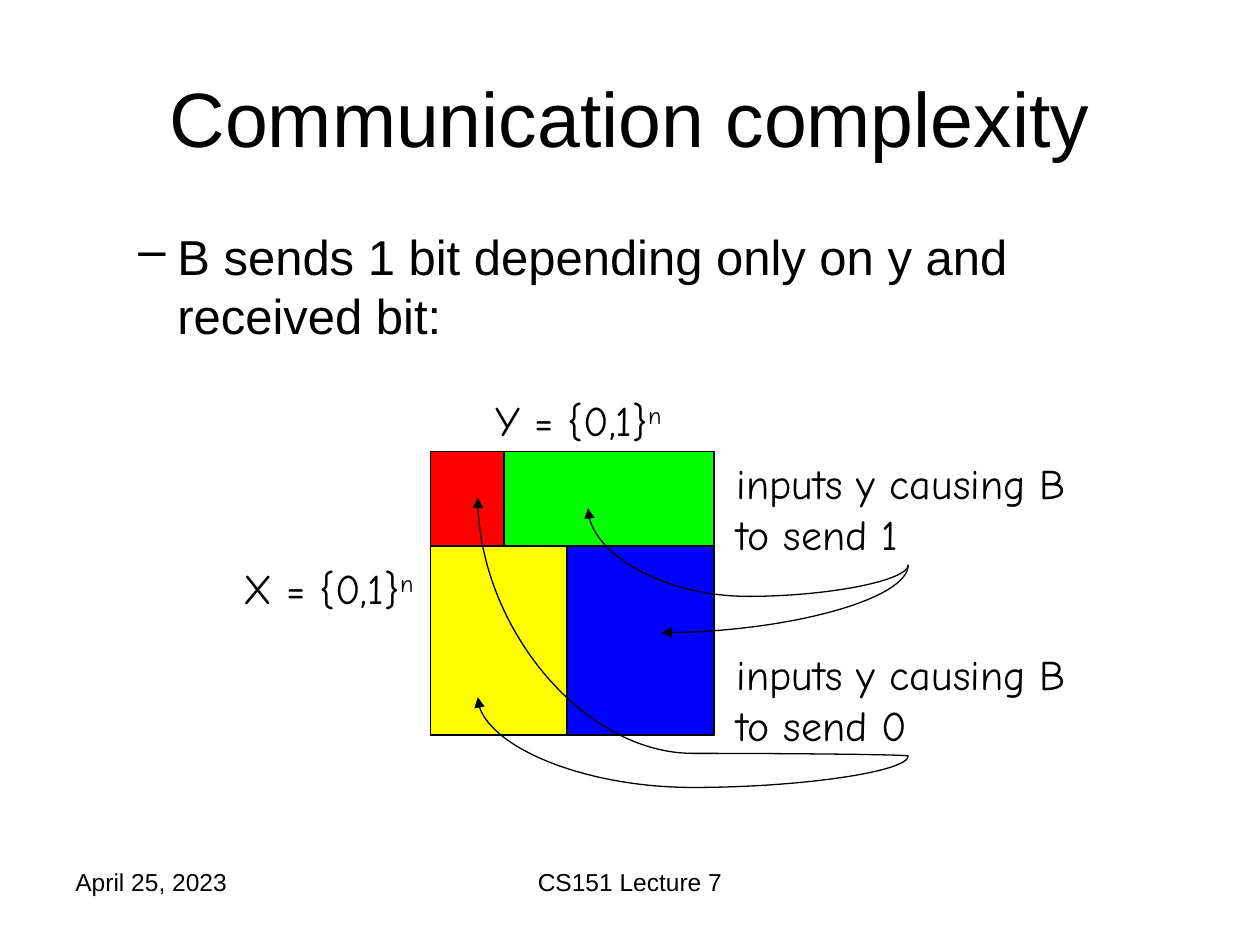
from dataclasses import dataclass

from lxml import etree
from pptx import Presentation
from pptx.dml.color import RGBColor
from pptx.enum.shapes import MSO_CONNECTOR, MSO_SHAPE
from pptx.enum.text import MSO_ANCHOR, MSO_AUTO_SIZE, PP_ALIGN
from pptx.oxml.ns import qn
from pptx.util import Inches, Pt

CURVE, RECTANGLE = MSO_CONNECTOR.CURVE, MSO_SHAPE.RECTANGLE
MIDDLE, GROW = MSO_ANCHOR.MIDDLE, MSO_AUTO_SIZE.SHAPE_TO_FIT_TEXT
LEFT, CENTER = PP_ALIGN.LEFT, PP_ALIGN.CENTER
CELL = Inches(1) / 12  # the slide is a grid of 120 columns by 90 rows


@dataclass(frozen=True)
class Theme:
    ink: str = "000000"
    red: str = "FF0000"
    green: str = "00FF00"
    yellow: str = "FFFF00"
    blue: str = "0000FF"
    font: str = "Arial"
    label_font: str = "Comic Neue"
    title: int = 44
    body: int = 28
    label: int = 24
    footer: int = 14
    line: float = 0.75


THEME = Theme()


def cells(*counts):
    return [round(count * CELL) for count in counts]


def shifted(origin, box):
    return (origin[0] + box[0], origin[1] + box[1], *box[2:])


def style_line(line):
    line.color.rgb = RGBColor.from_string(THEME.ink)
    line.width = Pt(THEME.line)


def add_text(slide, box, runs, size, font=THEME.font, align=LEFT, before=0, wrap=True):
    """Place one paragraph; runs are (text, is superscript) pairs."""
    frame = slide.shapes.add_textbox(*cells(*box)).text_frame
    frame.word_wrap = wrap
    paragraph = frame.paragraphs[0]
    paragraph.alignment = align
    if before:
        spacing = etree.SubElement(paragraph._p.get_or_add_pPr(), qn("a:spcBef"))
        etree.SubElement(spacing, qn("a:spcPct"), val=str(before * 1000))
    for text, superscript in runs:
        run = paragraph.add_run()
        run.text = text
        run.font.size = Pt(size)
        run.font.name = font
        run.font.color.rgb = RGBColor.from_string(THEME.ink)
        if superscript:
            run.font._element.set("baseline", "30000")
    return frame


def add_title(slide, box):
    frame = add_text(slide, box, [("Communication complexity", False)],
                     THEME.title, align=CENTER)
    frame.vertical_anchor = MIDDLE


def add_body(slide, box):
    frame = add_text(slide, box,
                     [("B sends 1 bit depending only on y and received bit:", False)],
                     THEME.body, before=20)
    # Dash bullet with a hanging indent
    properties = frame.paragraphs[0]._p.get_or_add_pPr()
    properties.set("marL", str(Inches(0.81)))
    properties.set("indent", str(Inches(-0.31)))
    etree.SubElement(properties, qn("a:buChar"), char="–")


def add_region(slide, box, color=None):
    region = slide.shapes.add_shape(RECTANGLE, *cells(*box))
    region.shadow.inherit = False
    if color:
        region.fill.solid()
        region.fill.fore_color.rgb = RGBColor.from_string(color)
    else:
        region.fill.background()
    style_line(region.line)


def add_curved_arrow(slide, start, end, bend=None):
    """Leave start vertically; bend is the row of the turn, None for a quarter turn."""
    (x1, y1), (x2, y2) = start, end
    run, rise = abs(x2 - x1), abs(y2 - y1)
    arrow = slide.shapes.add_connector(CURVE, 0, 0, 0, 0)
    # The unrotated frame has its sides swapped around the same centre
    arrow.left, arrow.top, arrow.width, arrow.height = cells(
        (x1 + x2 - rise) / 2, (y1 + y2 - run) / 2, rise, run)
    properties = arrow._element.spPr
    transform = properties.find(qn("a:xfrm"))
    upward = y2 < y1
    transform.set("rot", str((270 if upward else 90) * 60000))
    if upward:
        transform.set("flipV", "1")
    geometry = properties.find(qn("a:prstGeom"))
    if bend is None:
        geometry.set("prst", "curvedConnector2")
    else:
        share = round((bend - y1) / (y2 - y1) * 100000)
        etree.SubElement(geometry.find(qn("a:avLst")), qn("a:gd"),
                         name="adj1", fmla=f"val {share}")
    style_line(arrow.line)
    etree.SubElement(arrow.line._get_or_add_ln(), qn("a:tailEnd"), type="triangle")
    etree.SubElement(properties, qn("a:effectLst"))


def add_matrix(slide, box):
    left, top, width, height = box
    split_row = height / 3
    # Each band of rows: top, height, column split, left colour, right colour
    bands = [
        (0, split_row, 7, THEME.red, THEME.green),
        (split_row, height - split_row, 13, THEME.yellow, THEME.blue),
    ]
    for row, rows, split, left_color, right_color in bands:
        add_region(slide, (left, top + row, split, rows), left_color)
        add_region(slide, (left + split, top + row, width - split, rows), right_color)

    # Labels, relative to the matrix corner
    power = ("n", True)
    labels = [
        ((-19, 10, 25, 6), [("X = {0,1}", False), power], True),
        ((5, -6, 19, 6), [("Y = {0,1}", False), power], False),
        ((28, 0, 35, 10.8), [("inputs y causing B to send 1", False)], True),
        ((28, 18.2, 35, 10.8), [("inputs y causing B to send 0", False)], True),
    ]
    for place, runs, wrap in labels:
        frame = add_text(slide, shifted(box, place), runs, THEME.label,
                         THEME.label_font, before=50, wrap=wrap)
        frame.auto_size = GROW

    # Arrows from each input label to its regions
    send_one, send_zero = (45.5, 10.8), (45.5, 29)
    arrows = [
        (send_one, (15, 5.4), 13.8),
        (send_zero, (4.5, 4.4), 28.75),
        (send_one, (22, 17.25), None),
        (send_zero, (4.5, 23.4), 32),
    ]
    for start, end, bend in arrows:
        add_curved_arrow(slide, shifted(box, start), shifted(box, end),
                         None if bend is None else top + bend)

    # Outer frame
    add_region(slide, box)


def add_footer(slide, box):
    left, top, _, height = box
    add_text(slide, (left, top, 28, height), [("April 25, 2023", False)], THEME.footer)
    add_text(slide, (left + 35, top, 38, height), [("CS151 Lecture 7", False)],
             THEME.footer, align=CENTER)


def main():
    presentation = Presentation()
    presentation.slide_width, presentation.slide_height = cells(120, 90)
    slide = presentation.slides.add_slide(presentation.slide_layouts[6])
    add_title(slide, (6, 3.6, 108, 15))
    add_body(slide, (6, 21, 108, 59.4))
    add_matrix(slide, (41, 43, 27, 27))
    add_footer(slide, (6, 82, 108, 6.2))
    presentation.save("out.pptx")


if __name__ == "__main__":
    main()
